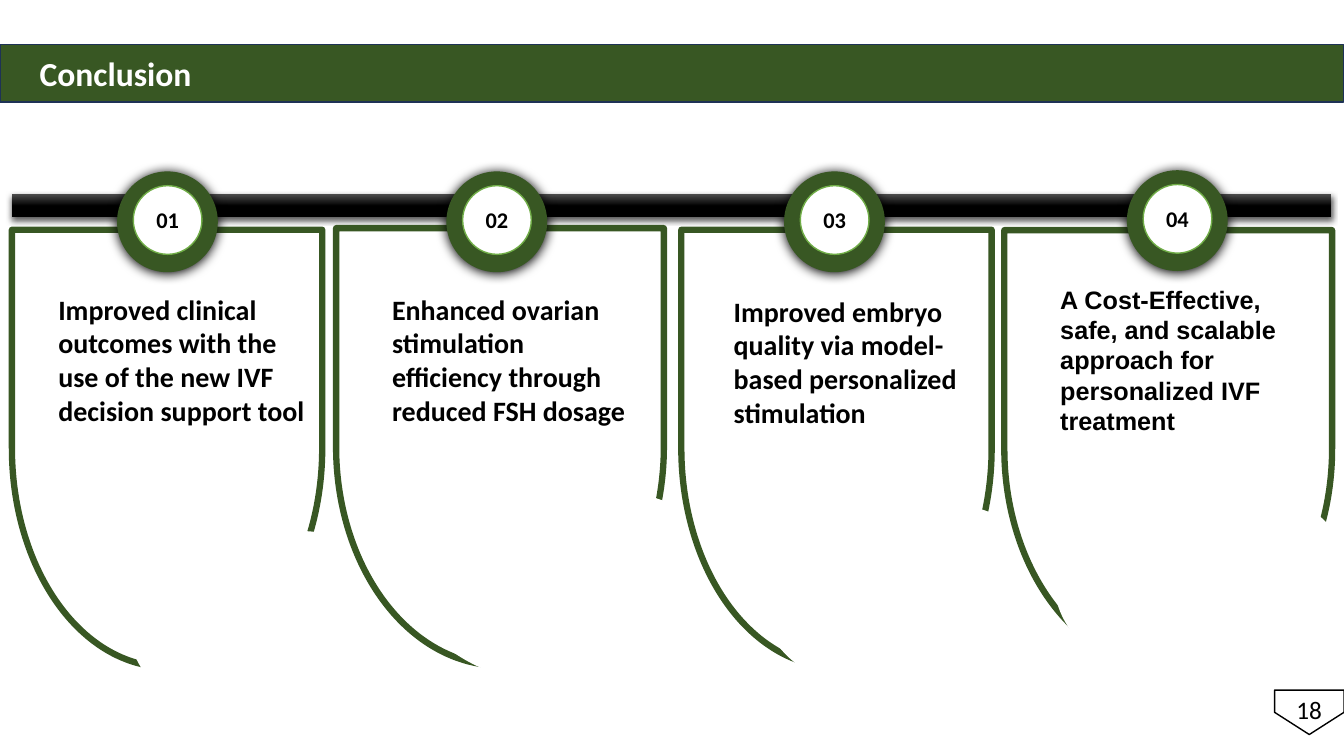
from typing import NamedTuple, Optional

import pptx
import pptx.dml.color
import pptx.enum.shapes
import pptx.enum.text
import pptx.oxml
import pptx.oxml.ns
import pptx.util
from pptx.util import Cm

SHAPE = pptx.enum.shapes.MSO_SHAPE
ALIGN = pptx.enum.text.PP_ALIGN
ANCHOR = pptx.enum.text.MSO_ANCHOR

COLORS = {
    "green": "385723",
    "light green": "70AD47",
    "navy": "1E3256",
    "grey": "4B4B4B",
    "black": "000000",
    "white": "FFFFFF",
}
CARD_HEIGHT = 11.02
RING_SIZE = 2.54
DISC_SIZE = 1.73


class Box(NamedTuple):
    """Left, top, width and height in centimetres."""
    left: float
    top: float
    width: float
    height: float


class Shadow(NamedTuple):
    """Downward shadow: opacity in percent, lengths in points."""
    opacity: int
    blur: float
    distance: float


class Conclusion(NamedTuple):
    number: str
    message: str
    card: Box
    mask: Box
    message_box: Box
    ring_left: float
    ring_top: float
    font: str = "Calibri"
    size: int = 20


CONCLUSIONS = [
    Conclusion("01", "Improved clinical outcomes with the use of the new IVF decision support tool",
               Box(0.3, 5.79, 7.82, CARD_HEIGHT), Box(3.3, 13.39, 8.03, 5.03),
               Box(1.22, 7.24, 6.86, 4.45), 2.95, 4.32),
    Conclusion("02", "Enhanced ovarian stimulation efficiency through reduced FSH dosage",
               Box(8.47, 5.75, 8.26, CARD_HEIGHT), Box(10.44, 12.27, 8.26, 5.03),
               Box(9.63, 7.24, 6.68, 4.45), 11.25, 4.32),
    Conclusion("03", "Improved embryo quality via model-based personalized stimulation",
               Box(17.17, 5.79, 7.82, CARD_HEIGHT), Box(19.2, 12.6, 7.7, 5.03),
               Box(18.24, 7.29, 6.4, 4.45), 19.76, 4.32),
    Conclusion("04", "A Cost-Effective, safe, and scalable approach for personalized IVF treatment",
               Box(25.31, 5.8, 8.26, CARD_HEIGHT), Box(26.59, 12.04, 7.49, 5.28),
               Box(26.47, 7.04, 7.09, 4.88), 28.4, 4.29, "Arial", 18),
]


def rgb(color: str) -> pptx.dml.color.RGBColor:
    return pptx.dml.color.RGBColor.from_string(COLORS[color])


def lengths(box: Box) -> list:
    return [Cm(value) for value in box]


def add_shadow(shape, shadow: Shadow) -> None:
    effects = shape._element.spPr.find(pptx.oxml.ns.qn("a:effectLst"))
    effects.append(pptx.oxml.parse_xml(
        f'<a:outerShdw {pptx.oxml.ns.nsdecls("a")} blurRad="{pptx.util.Pt(shadow.blur)}" '
        f'dist="{pptx.util.Pt(shadow.distance)}" dir="5400000" algn="t" rotWithShape="0">'
        f'<a:srgbClr val="{COLORS["black"]}"><a:alpha val="{shadow.opacity * 1000}"/></a:srgbClr>'
        '</a:outerShdw>'))


def add_figure(slide, preset, box: Box, fill: str = "white", line: Optional[str] = None,
               line_width: float = 1, shadow: Optional[Shadow] = None):
    figure = slide.shapes.add_shape(preset, *lengths(box))
    figure.shadow.inherit = False
    figure.fill.solid()
    figure.fill.fore_color.rgb = rgb(fill)
    if line:
        figure.line.color.rgb = rgb(line)
        figure.line.width = pptx.util.Pt(line_width)
    else:
        figure.line.fill.background()
    if shadow:
        add_shadow(figure, shadow)
    return figure


def add_turned(slide, preset, box: Box, **style):
    """Draw a preset turned a quarter clockwise so that it fills the given box."""
    shift = (box.width - box.height) / 2
    flat = Box(box.left + shift, box.top - shift, box.height, box.width)
    figure = add_figure(slide, preset, flat, **style)
    figure.rotation = 90
    return figure


def write(shape, text: str, *, size: int, font: str = "Calibri", color: str = "black",
          bold: bool = True, align=ALIGN.LEFT, anchor=ANCHOR.TOP, wrap: bool = True) -> None:
    frame = shape.text_frame
    frame.word_wrap = wrap
    frame.vertical_anchor = anchor
    paragraph = frame.paragraphs[0]
    paragraph.alignment = align
    run = paragraph.add_run()
    run.text = text
    run.font.size = pptx.util.Pt(size)
    run.font.name = font
    run.font.bold = bold
    run.font.color.rgb = rgb(color)


def add_timeline(slide) -> None:
    timeline = add_figure(slide, SHAPE.RECTANGLE, Box(0.3, 4.9, 33.25, 0.58),
                          shadow=Shadow(63, 4.5, 1.5))
    timeline.fill.gradient()
    timeline.fill.gradient_angle = 270
    for stop, color, position in zip(timeline.fill.gradient_stops, ("grey", "black"), (0, 0.5)):
        stop.color.rgb = rgb(color)
        stop.position = position


def add_heading(slide) -> None:
    heading = add_figure(slide, SHAPE.RECTANGLE, Box(0, 1.12, 33.86, 1.45), "green", "navy")
    heading.text_frame.margin_left = Cm(1)
    write(heading, "Conclusion", size=24, color="white", anchor=ANCHOR.MIDDLE)


def add_page_number(slide) -> None:
    add_turned(slide, SHAPE.PENTAGON, Box(32.12, 17.39, 1.75, 1.12), line="black")
    page_number = slide.shapes.add_textbox(*lengths(Box(32.41, 17.37, 1.17, 1.02)))
    write(page_number, "18", size=18, bold=False, align=ALIGN.CENTER, wrap=False)


def add_card(slide, item: Conclusion) -> None:
    """Draw a card, the white oval that hides part of its edge, and its message."""
    add_turned(slide, SHAPE.FLOWCHART_DELAY, item.card, line="green", line_width=4.5)
    add_figure(slide, SHAPE.OVAL, item.mask, line="white")
    message = slide.shapes.add_textbox(*lengths(item.message_box))
    write(message, item.message, size=item.size, font=item.font)


def add_badge(slide, item: Conclusion) -> None:
    ring = Box(item.ring_left, item.ring_top, RING_SIZE, RING_SIZE)
    add_figure(slide, SHAPE.OVAL, ring, "green", shadow=Shadow(100, 8.5, 1))
    disc = Box(ring.left + 0.41, ring.top + 0.36, DISC_SIZE, DISC_SIZE)
    number = add_figure(slide, SHAPE.OVAL, disc, line="light green")
    write(number, item.number, size=16, align=ALIGN.CENTER, anchor=ANCHOR.MIDDLE, wrap=False)


def main() -> None:
    deck = pptx.Presentation()
    deck.slide_width, deck.slide_height = Cm(33.87), Cm(19.05)
    slide = deck.slides.add_slide(deck.slide_layouts[6])
    add_timeline(slide)
    add_heading(slide)
    add_page_number(slide)
    for item in CONCLUSIONS:
        add_card(slide, item)
    for item in CONCLUSIONS:
        add_badge(slide, item)
    deck.save("out.pptx")


if __name__ == "__main__":
    main()
